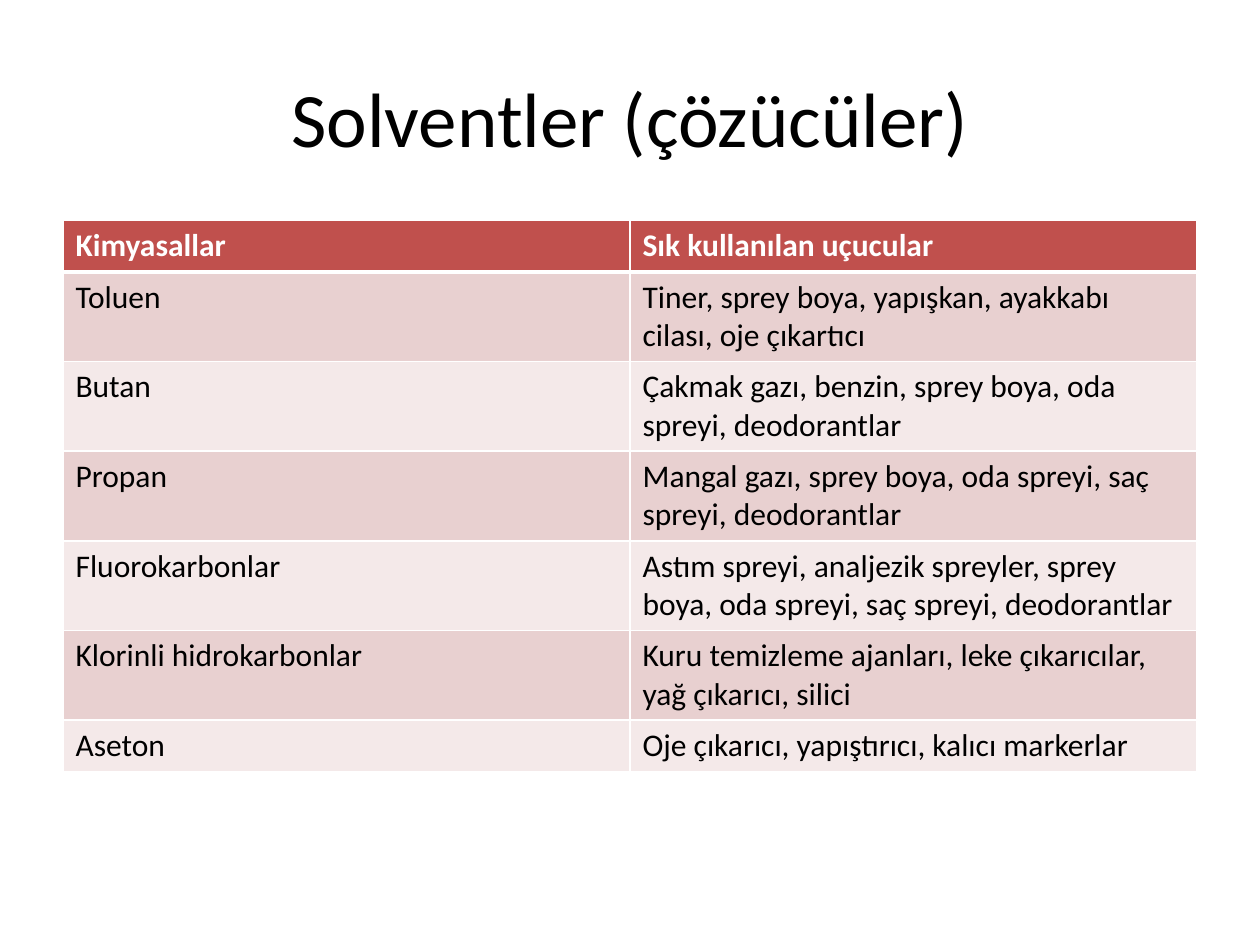
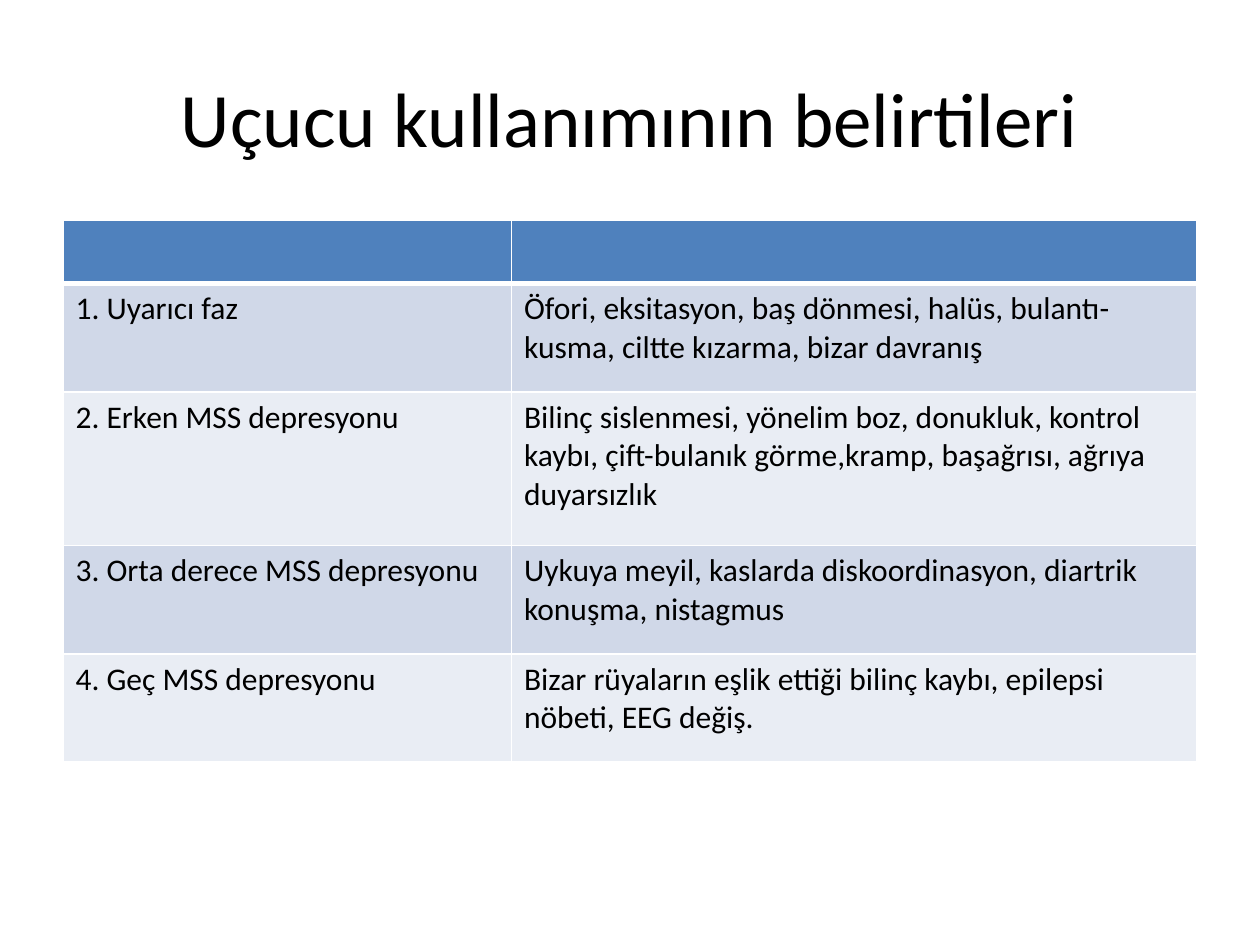
from lxml import etree
from pptx import Presentation
from pptx.dml.color import RGBColor
from pptx.enum.text import MSO_ANCHOR, PP_ALIGN
from pptx.oxml.ns import qn
from pptx.util import Inches, Pt

CENTER, LEFT = PP_ALIGN.CENTER, PP_ALIGN.LEFT
MIDDLE = MSO_ANCHOR.MIDDLE
FONT, BLACK, WHITE = "Calibri", "000000", "FFFFFF"
TITLE_ONLY = 5

slides = [
    dict(
        title="Solventler (çözücüler)",
        fills=("C0504D", "E8D0D0", "F4E9E9"),
        widths=(4.5, 4.5),
        heights=[0.41] * 7,
        rows=[
            ("Kimyasallar", "Sık kullanılan uçucular"),
            ("Toluen", "Tiner, sprey boya, yapışkan, ayakkabı cilası, oje çıkartıcı"),
            ("Butan", "Çakmak gazı, benzin, sprey boya, oda spreyi, deodorantlar"),
            ("Propan", "Mangal gazı, sprey boya, oda spreyi, saç spreyi, deodorantlar"),
            ("Fluorokarbonlar", "Astım spreyi, analjezik spreyler, sprey boya, oda spreyi, "
                                "saç spreyi, deodorantlar"),
            ("Klorinli hidrokarbonlar", "Kuru temizleme ajanları, leke çıkarıcılar, "
                                        "yağ çıkarıcı, silici"),
            ("Aseton", "Oje çıkarıcı, yapıştırıcı, kalıcı markerlar"),
        ],
    ),
    dict(
        title="Uçucu kullanımının belirtileri",
        fills=("4F81BD", "D0D8E8", "E9EDF4"),
        widths=(3.56, 5.44),
        heights=[0.5, 0.86, 1.22, 0.86, 0.86],
        rows=[
            ("", ""),
            ("1. Uyarıcı faz", "Öfori, eksitasyon, baş dönmesi, halüs, bulantı-kusma, "
                               "ciltte kızarma, bizar davranış"),
            ("2. Erken MSS depresyonu", "Bilinç sislenmesi, yönelim boz, donukluk, kontrol kaybı, "
                                        "çift-bulanık görme,kramp, başağrısı, ağrıya duyarsızlık"),
            ("3. Orta derece MSS depresyonu", "Uykuya meyil, kaslarda diskoordinasyon, "
                                              "diartrik konuşma, nistagmus"),
            ("4. Geç MSS depresyonu", "Bizar rüyaların eşlik ettiği bilinç kaybı, "
                                      "epilepsi nöbeti, EEG değiş."),
        ],
    ),
]


def set_text(tf, text, size=18, color=BLACK, bold=False, align=LEFT):
    p = tf.paragraphs[0]
    p.alignment = align
    if not text:
        return
    r = p.add_run()
    r.text = text
    r.font.name, r.font.size, r.font.bold = FONT, Pt(size), bold
    r.font.color.rgb = RGBColor.from_string(color)


def set_borders(cell, **widths):
    """Draw white borders; widths are points keyed by side, in the order L, R, T, B."""
    tcPr = cell._tc.get_or_add_tcPr()
    for side, width in widths.items():
        ln = etree.SubElement(tcPr, qn(f"a:ln{side}"), w=str(Pt(width)))
        fill = etree.SubElement(ln, qn("a:solidFill"))
        etree.SubElement(fill, qn("a:srgbClr"), val=WHITE)


prs = Presentation()
prs.slide_width, prs.slide_height = Inches(10), Inches(7.5)

for data in slides:
    s = prs.slides.add_slide(prs.slide_layouts[TITLE_ONLY])
    title = s.shapes.title
    title.left, title.top = Inches(0.5), Inches(0.3)
    title.width, title.height = Inches(9), Inches(1.25)
    title.text_frame.vertical_anchor = MIDDLE
    set_text(title.text_frame, data["title"], size=44, align=CENTER)

    rows, heights = data["rows"], data["heights"]
    table = s.shapes.add_table(len(rows), 2, Inches(0.5), Inches(1.75),
                               Inches(9), Inches(sum(heights))).table
    for column, width in zip(table.columns, data["widths"]):
        column.width = Inches(width)

    header_fill, *bands = data["fills"]
    for i, (row, height) in enumerate(zip(rows, heights)):
        table.rows[i].height = Inches(height)
        header = i == 0
        for j, text in enumerate(row):
            cell = table.cell(i, j)
            set_borders(cell, L=1, R=1, T=3 if i == 1 else 1, B=3 if header else 1)
            cell.fill.solid()
            cell.fill.fore_color.rgb = RGBColor.from_string(
                header_fill if header else bands[(i - 1) % 2])
            set_text(cell.text_frame, text, color=WHITE if header else BLACK, bold=header)

prs.save("out.pptx")
